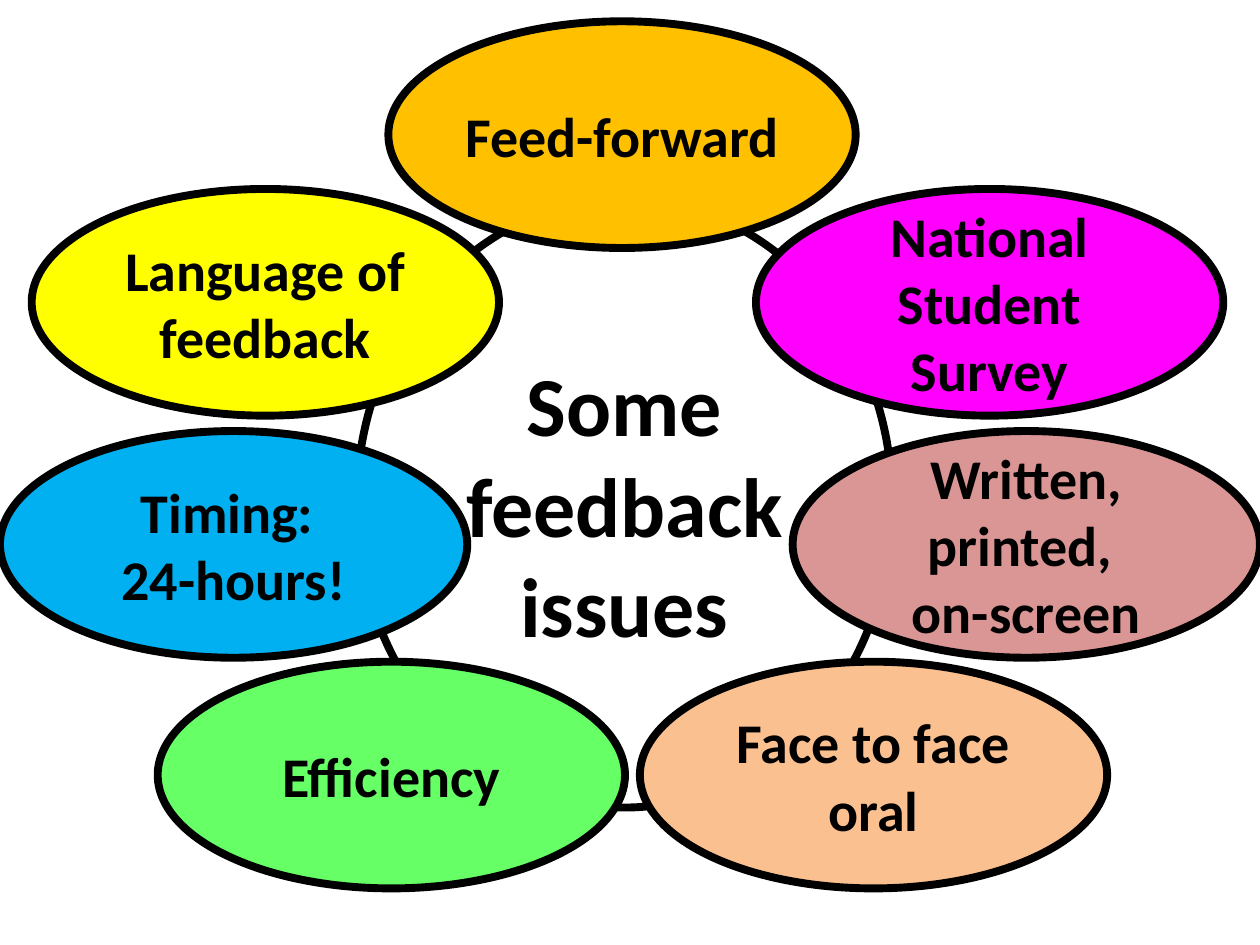
from pptx import Presentation
from pptx.dml.color import RGBColor
from pptx.enum.shapes import MSO_SHAPE as Shape
from pptx.enum.text import MSO_ANCHOR as Anchor, MSO_AUTO_SIZE as AutoSize, PP_ALIGN as Align
from pptx.util import Cm, Pt

BLACK = RGBColor(0x00, 0x00, 0x00)
ROSE = RGBColor(0xD9, 0x96, 0x94)
YELLOW = RGBColor(0xFF, 0xFF, 0x00)
MAGENTA = RGBColor(0xFF, 0x00, 0xFF)
BLUE = RGBColor(0x00, 0xB0, 0xF0)
AMBER = RGBColor(0xFF, 0xC0, 0x00)
GREEN = RGBColor(0x66, 0xFF, 0x66)
PEACH = RGBColor(0xFA, 0xC0, 0x90)

# Left, top, width and height in centimetres
RING = (7.19, 4.01, 10.8, 12.27)
TITLE = (8.77, 5.81, 7.64, 8.68)
ISSUE_SIZE = (9.42, 4.57)

# Left, top, colour and lines, from back to front
ISSUES = [
    (15.98, 8.69, ROSE, ["Written, printed, ", "on-screen"]),
    (0.64, 3.81, YELLOW, ["Language of feedback"]),
    (15.24, 3.81, MAGENTA, ["National Student Survey"]),
    (0, 8.69, BLUE, ["Timing: ", "24-hours!"]),
    (7.83, 0.43, AMBER, ["Feed-forward"]),
    (3.18, 13.34, GREEN, ["Efficiency"]),
    (12.9, 13.34, PEACH, ["Face to face", "oral"]),
]


class IssueSlide:
    font_name = "Calibri"
    title_size = Pt(48)
    issue_size = Pt(32)
    outline = Pt(4.5)

    def __init__(self, presentation):
        self.slide = presentation.slides.add_slide(presentation.slide_layouts[5])

    def add_lines(self, shape, lines, size):
        frame = shape.text_frame
        frame.word_wrap = True
        frame.auto_size = AutoSize.NONE
        frame.vertical_anchor = Anchor.MIDDLE
        for index, line in enumerate(lines):
            paragraph = frame.add_paragraph() if index else frame.paragraphs[0]
            paragraph.alignment = Align.CENTER
            run = paragraph.add_run()
            run.text = line
            run.font.name = self.font_name
            run.font.size = size
            run.font.bold = True
            run.font.color.rgb = BLACK

    def title(self, box, lines):
        title = self.slide.shapes.title
        title.left, title.top, title.width, title.height = map(Cm, box)
        self.add_lines(title, lines, self.title_size)

    def ellipse(self, box, color=None):
        shape = self.slide.shapes.add_shape(Shape.OVAL, *map(Cm, box))
        shape.shadow.inherit = False
        if color is None:
            shape.fill.background()
        else:
            shape.fill.solid()
            shape.fill.fore_color.rgb = color
        shape.line.color.rgb = BLACK
        shape.line.width = self.outline
        return shape

    def issue(self, left, top, color, lines):
        shape = self.ellipse((left, top, *ISSUE_SIZE), color)
        frame = shape.text_frame
        frame.margin_left = frame.margin_right = 0
        frame.margin_top = frame.margin_bottom = 0
        self.add_lines(shape, lines, self.issue_size)


def main():
    presentation = Presentation()
    presentation.slide_width = Cm(25.4)
    presentation.slide_height = Cm(19.05)
    page = IssueSlide(presentation)

    # Title inside the connecting ring
    page.title(TITLE, ["Some feedback", "issues"])
    page.ellipse(RING)

    # Issues around the ring
    for issue in ISSUES:
        page.issue(*issue)

    presentation.save("out.pptx")


if __name__ == "__main__":
    main()
